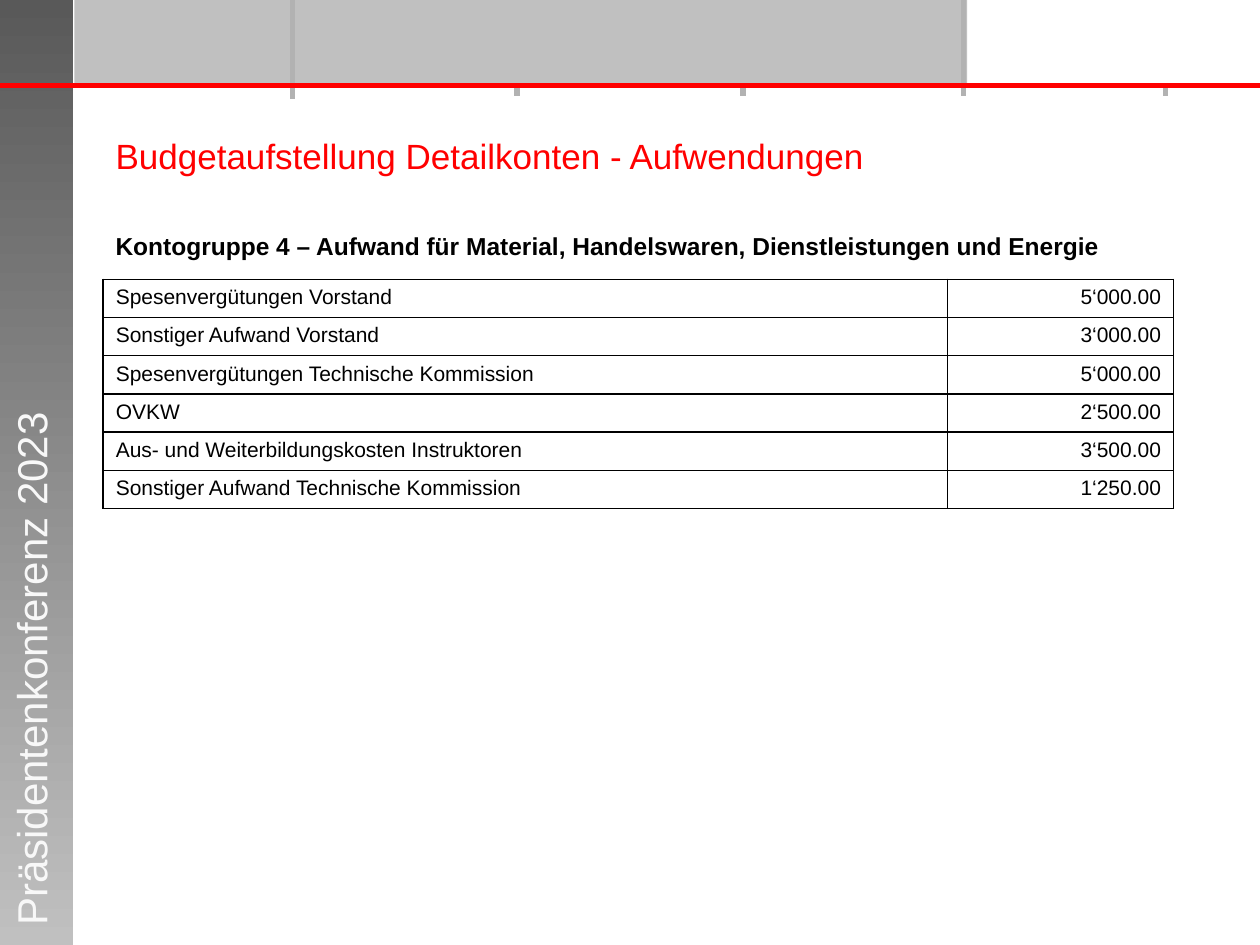
"""Builds the budget slide for expense account group 4."""
from lxml.etree import SubElement
from pptx import Presentation
from pptx.dml.color import RGBColor
from pptx.enum.shapes import MSO_CONNECTOR, MSO_SHAPE
from pptx.enum.text import MSO_ANCHOR, PP_ALIGN
from pptx.oxml import parse_xml
from pptx.oxml.ns import nsdecls, qn
from pptx.util import Cm, Pt

RED = RGBColor(0xFF, 0x00, 0x00)
BLACK = RGBColor(0x00, 0x00, 0x00)
WHITE = RGBColor(0xFF, 0xFF, 0xFF)
OFF_WHITE = RGBColor(0xF8, 0xF8, 0xF8)
TICK_GRAY = RGBColor(0xB2, 0xB2, 0xB2)
LIGHT_GRAY = RGBColor(0xC0, 0xC0, 0xC0)
DARK_GRAY = RGBColor(0x59, 0x59, 0x59)

ROWS = [
    ("Spesenvergütungen Vorstand", "5‘000.00"),
    ("Sonstiger Aufwand Vorstand", "3‘000.00"),
    ("Spesenvergütungen Technische Kommission", "5‘000.00"),
    ("OVKW", "2‘500.00"),
    ("Aus- und Weiterbildungskosten Instruktoren", "3‘500.00"),
    ("Sonstiger Aufwand Technische Kommission", "1‘250.00"),
]


def add_line(x1, y1, x2, y2, color):
    c = s.shapes.add_connector(MSO_CONNECTOR.STRAIGHT, Cm(x1), Cm(y1), Cm(x2), Cm(y2))
    c.line.color.rgb = color
    c.line.width = Pt(3)
    SubElement(c._element.spPr, qn("a:effectLst"))


def add_text(p, text, color, **fmt):
    r = p.add_run()
    r.text = text
    r.font.color.rgb = color
    for name, value in {"name": "Arial", **fmt}.items():
        setattr(r.font, name, value)


prs = Presentation()
prs.slide_width, prs.slide_height = Cm(25.4), Cm(19.05)
s = prs.slides.add_slide(prs.slide_layouts[6])

for x in (14.98, 10.42):
    add_line(x, 0, x, 1.93, TICK_GRAY)

bars = []
for x, w, h in ((0, 1.47, 19.05), (1.5, 18, 1.73)):
    sp = s.shapes.add_shape(MSO_SHAPE.RECTANGLE, Cm(x), Cm(0), Cm(w), Cm(h))
    sp.shadow.inherit = False
    sp.line.fill.background()
    bars.append(sp)
side, header = bars
side.fill.gradient()
side.fill.gradient_angle = 270
for stop, color, position in zip(side.fill.gradient_stops, (DARK_GRAY, LIGHT_GRAY), (0, 1)):
    stop.color.rgb = color
    stop.position = position
header.fill.solid()
header.fill.fore_color.rgb = LIGHT_GRAY

for x, top, bottom in ((5.89, 0, 2), (19.43, 0, 1.93), (23.5, 1.73, 1.93)):
    add_line(x, top, x, bottom, TICK_GRAY)
add_line(0, 1.73, 25.4, 1.73, RED)

sp = s.shapes.add_textbox(Cm(-4.88), Cm(12.78), Cm(11), Cm(1.27))
sp.rotation = 270
tf = sp.text_frame
tf.word_wrap = True
add_text(tf.paragraphs[0], "Präsidentenkonferenz 2023", OFF_WHITE, size=Pt(24))

sp = s.shapes.add_textbox(Cm(2.08), Cm(2.59), Cm(21.84), Cm(2.8))
tf = sp.text_frame
tf.word_wrap = True
add_text(tf.paragraphs[0], "Budgetaufstellung Detailkonten - Aufwendungen", RED, size=Pt(20))
p = tf.add_paragraph()
p.space_before = Pt(31)
add_text(p, "Kontogruppe 4 – Aufwand für Material, Handelswaren, Dienstleistungen und Energie",
         BLACK, size=Pt(14), bold=True)

table = s.shapes.add_table(len(ROWS), 2, Cm(2.08), Cm(5.63), Cm(21.58), Cm(4.6)).table
for name in ("first_row", "horz_banding"):
    setattr(table, name, False)
for column, width in zip(table.columns, (17.02, 4.56)):
    column.width = Cm(width)
for i, values in enumerate(ROWS):
    table.rows[i].height = Cm(0.77)
    for j, (value, align) in enumerate(zip(values, (PP_ALIGN.LEFT, PP_ALIGN.RIGHT))):
        cell = table.cell(i, j)
        cell.vertical_anchor = MSO_ANCHOR.TOP
        p = cell.text_frame.paragraphs[0]
        p.alignment = align
        add_text(p, value, BLACK, size=Pt(12))
        tcPr = cell._tc.get_or_add_tcPr()
        for edge in ("lnL", "lnR", "lnT", "lnB"):
            tcPr.append(parse_xml(
                f'<a:{edge} {nsdecls("a")} w="12700"><a:solidFill>'
                f'<a:srgbClr val="{BLACK}"/></a:solidFill></a:{edge}>'))
        cell.fill.solid()
        cell.fill.fore_color.rgb = WHITE

prs.save("out.pptx")
